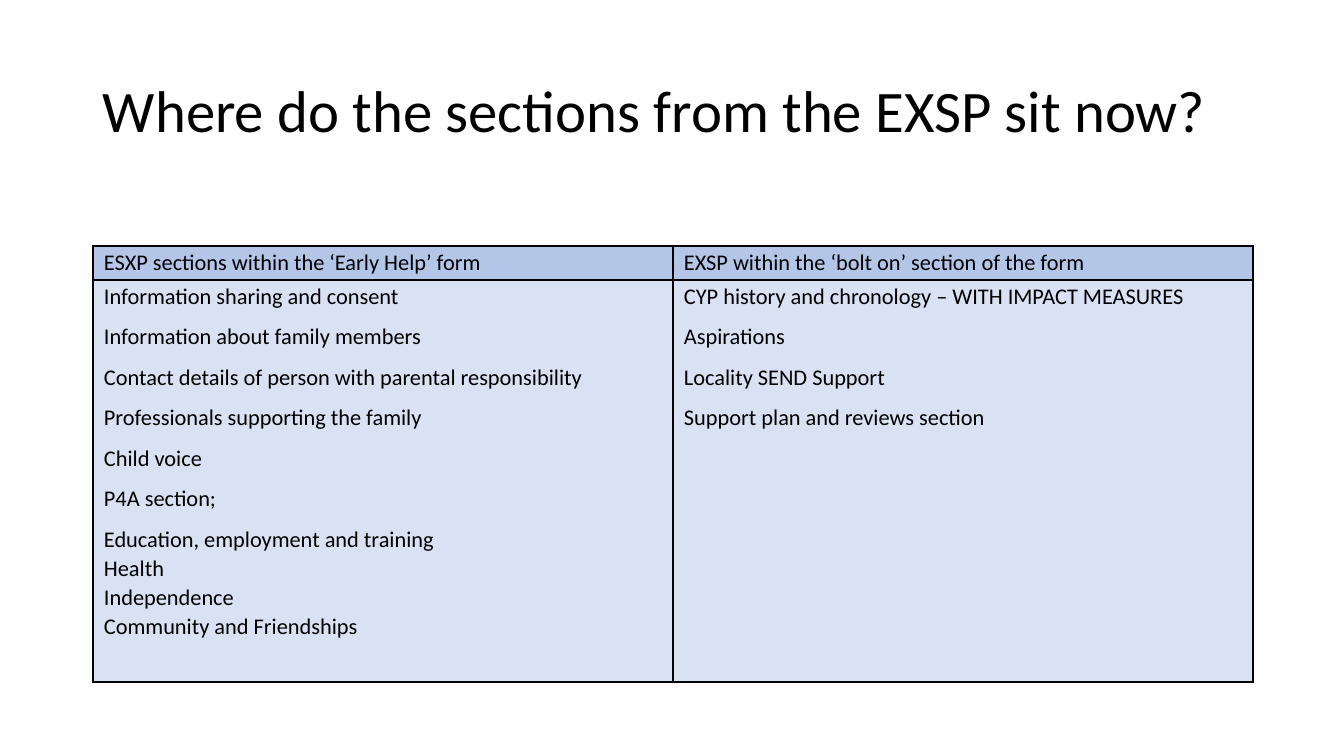
import pptx
import pptx.dml.color
import pptx.enum.text
import pptx.oxml
import pptx.oxml.ns
import pptx.util

# Content
TITLE = "Where do the sections from the EXSP sit now?"
HEADINGS = [
    "ESXP sections within the ‘Early Help’ form",
    "EXSP within the ‘bolt on’ section of the form",
]
EARLY_HELP = [
    "Information sharing and consent",
    "Information about family members",
    "Contact details of person with parental responsibility",
    "Professionals supporting the family",
    "Child voice",
    "P4A section;",
]
P4A_TOPICS = [
    "Education, employment and training",
    "Health",
    "Independence",
    "Community and Friendships",
]
BOLT_ON = [
    "CYP history and chronology – WITH IMPACT MEASURES",
    "Aspirations",
    "Locality SEND Support",
    "Support plan and reviews section",
]
ROWS = [
    [[HEADINGS[0]], [HEADINGS[1]]],
    [EARLY_HELP + P4A_TOPICS, BOLT_ON],
]

# Theme and layout, lengths in px
THEME = {
    "font": "Calibri",
    "ink": "000000",
    "row_fills": ["B4C6E7", "D9E2F3"],
    "title_size": 42,
    "body_size": 16,
    "border": 1,
    "space_after": 8,
}
PX = 914400 / 100.8
PAGE = (1344, 756)
TITLE_BOX = (93, 40, 1159, 146)
TABLE_LEFT, TABLE_TOP = 93, 246
COLUMN_WIDTH = 580
ROW_HEIGHTS = [34, 402]
TOPIC_INDENT = 38


def px(length):
    return pptx.util.Emu(round(length * PX))


def apply(target, values):
    for name, value in values.items():
        setattr(target, name, value)


def color(code):
    return pptx.dml.color.RGBColor.from_string(code)


def write(para, text, size, values):
    apply(para, values)
    span = para.add_run()
    span.text = text
    apply(span.font, {"name": THEME["font"], "size": pptx.util.Pt(size)})
    span.font.color.rgb = color(THEME["ink"])


def add_borders(cell):
    properties = cell._tc.get_or_add_tcPr()
    width = pptx.util.Pt(THEME["border"])
    for position, side in enumerate(("lnL", "lnR", "lnT", "lnB")):
        properties.insert(position, pptx.oxml.parse_xml(
            f'<a:{side} {pptx.oxml.ns.nsdecls("a")} w="{width}"><a:solidFill>'
            f'<a:srgbClr val="{THEME["ink"]}"/></a:solidFill></a:{side}>'))


def fill_cell(cell, lines, fill):
    cell.fill.solid()
    cell.fill.fore_color.rgb = color(fill)
    add_borders(cell)
    apply(cell, {"margin_left": px(11), "margin_right": px(11),
                 "margin_top": px(1), "margin_bottom": 0})
    for index, line in enumerate(lines):
        frame = cell.text_frame
        para = frame.add_paragraph() if index else frame.paragraphs[0]
        tight = line in P4A_TOPICS[:-1]
        if line in P4A_TOPICS:
            apply(para._p.get_or_add_pPr(),
                  {"marL": px(TOPIC_INDENT), "indent": -px(TOPIC_INDENT)})
        write(para, line, THEME["body_size"], {
            "line_spacing": 1.07,
            "space_after": pptx.util.Pt(0 if tight else THEME["space_after"])})


def main():
    deck = pptx.Presentation()
    apply(deck, {"slide_width": px(PAGE[0]), "slide_height": px(PAGE[1])})
    page = deck.slides.add_slide(deck.slide_layouts[6])

    # Title
    frame = page.shapes.add_textbox(*map(px, TITLE_BOX)).text_frame
    apply(frame, {"word_wrap": True,
                  "vertical_anchor": pptx.enum.text.MSO_ANCHOR.MIDDLE})
    write(frame.paragraphs[0], TITLE, THEME["title_size"], {"line_spacing": 0.9})

    # Table of sections
    table = page.shapes.add_table(
        len(ROWS), len(HEADINGS), px(TABLE_LEFT), px(TABLE_TOP),
        px(COLUMN_WIDTH * len(HEADINGS)), px(sum(ROW_HEIGHTS))).table
    apply(table, {"first_row": False, "horz_banding": False})
    for column in table.columns:
        column.width = px(COLUMN_WIDTH)
    for r, cells in enumerate(ROWS):
        table.rows[r].height = px(ROW_HEIGHTS[r])
        for c, lines in enumerate(cells):
            fill_cell(table.cell(r, c), lines, THEME["row_fills"][r])

    deck.save("out.pptx")


if __name__ == "__main__":
    main()
